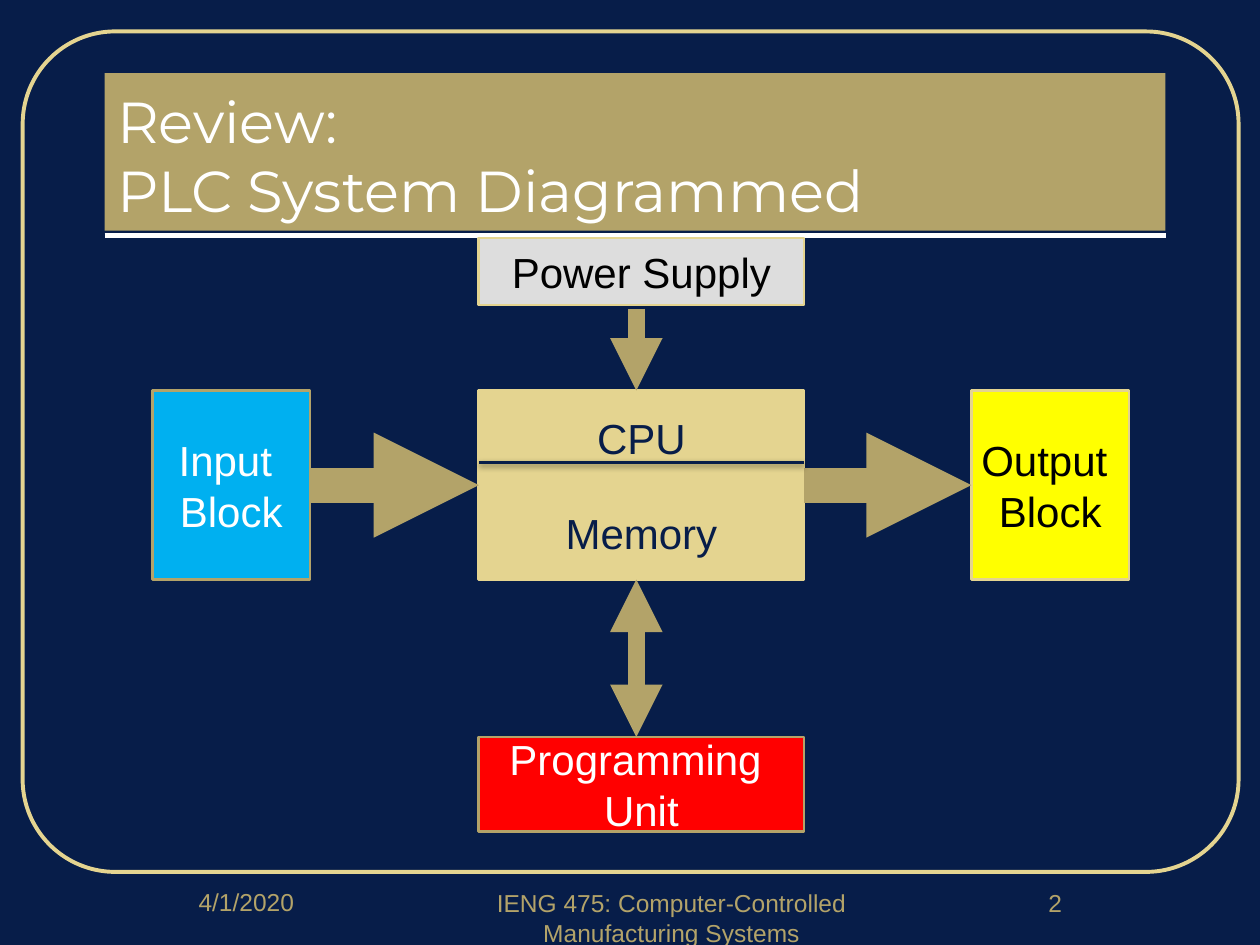
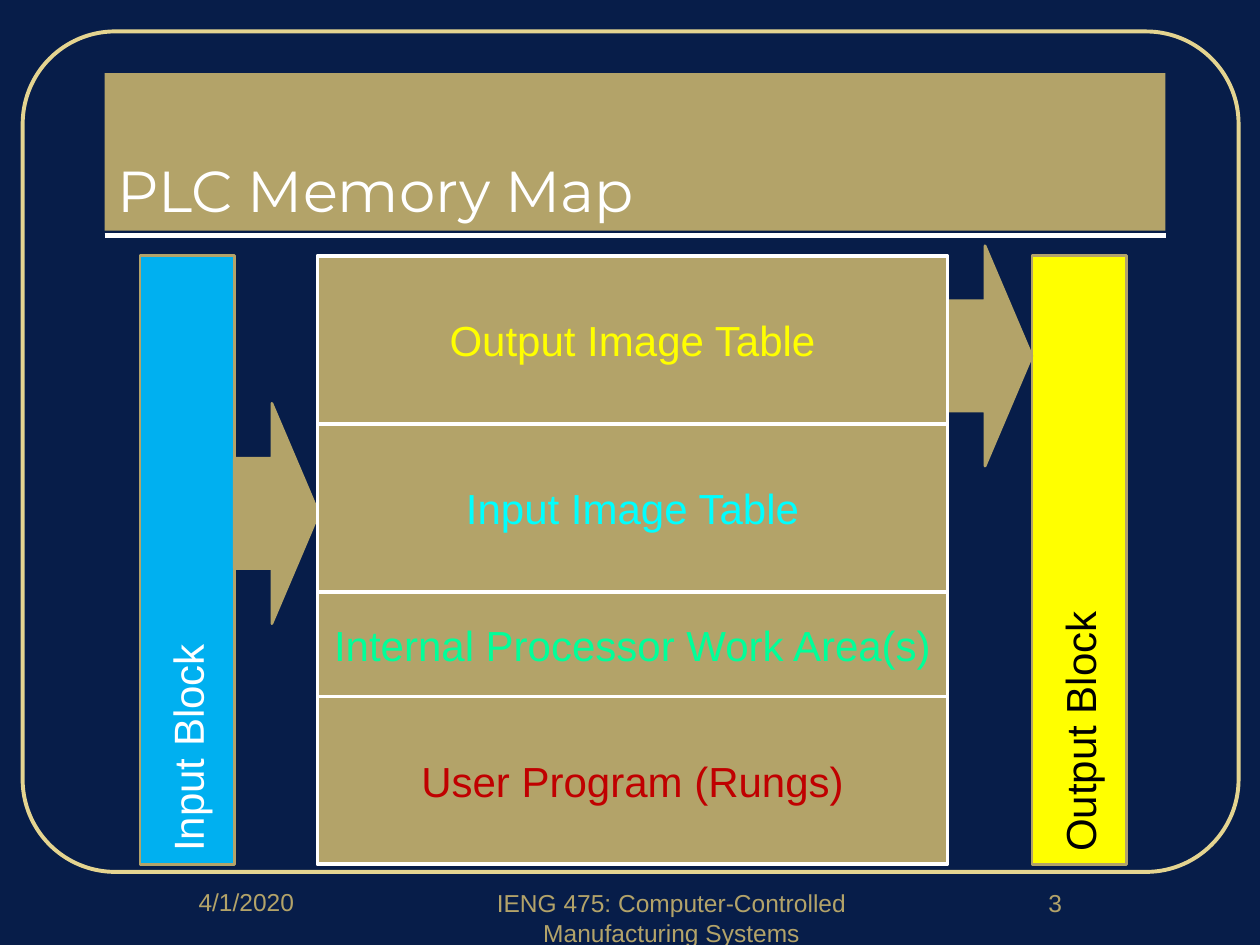
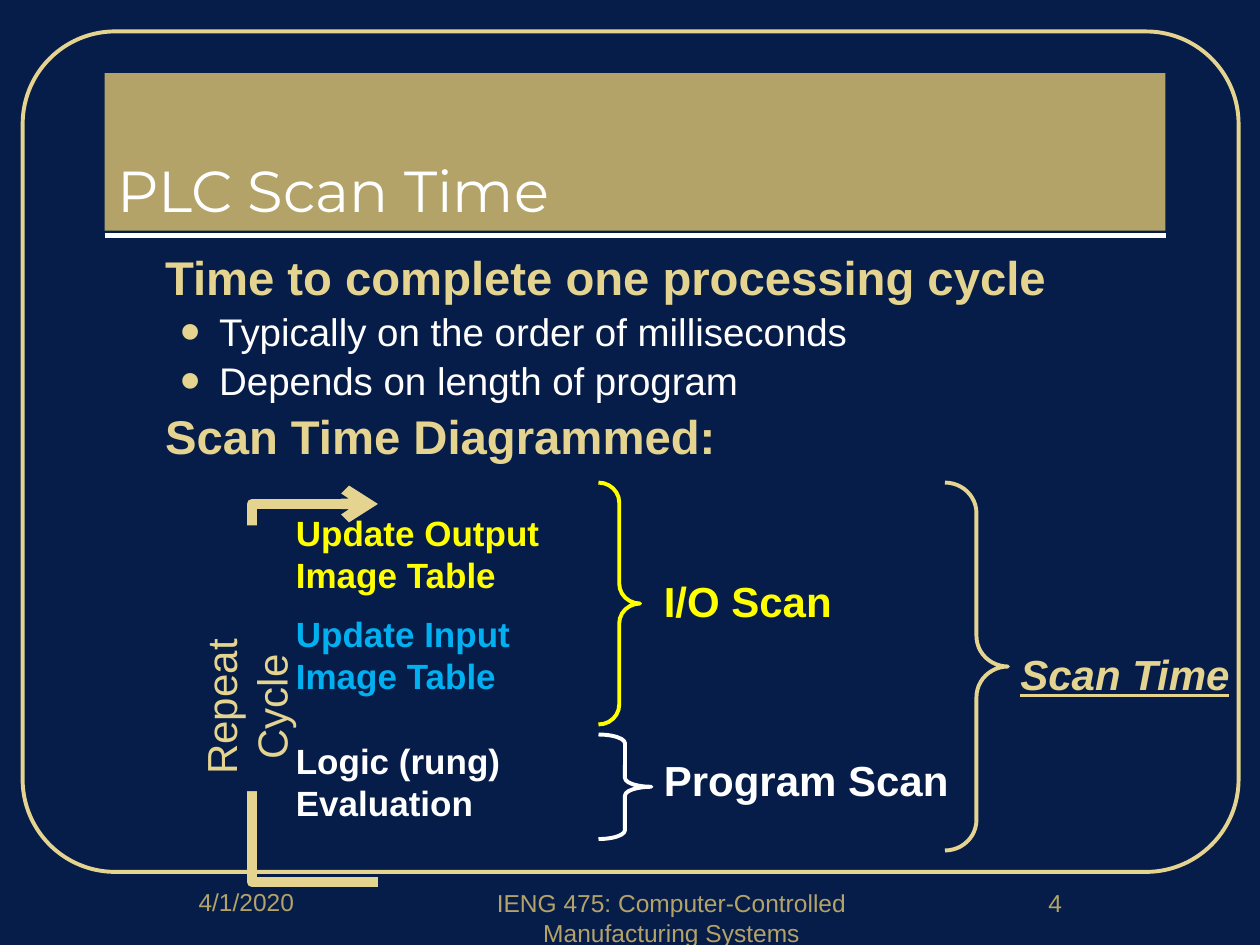
from dataclasses import dataclass

from lxml import etree
from pptx import Presentation
from pptx import util as u
from pptx.dml.color import RGBColor
from pptx.enum import shapes, text
from pptx.oxml import ns

NAVY, GOLD, SAND, WHITE, BLACK = "071D49", "B3A369", "E4D490", "FFFFFF", "000000"
BLUE, YELLOW = "00B0F0", "FFFF00"
BODY_FONT, TITLE_FONT = "Arial", "Montserrat"
COURSE = "IENG 475: Computer-Controlled Manufacturing Systems"
SHAPE = shapes.MSO_SHAPE
LEFT, CENTER = text.PP_ALIGN.LEFT, text.PP_ALIGN.CENTER
MIDDLE = text.MSO_ANCHOR.MIDDLE
CPU_LEFT, CPU_WIDTH, ARROW_X, FLOW_Y = 3.8, 2.58, 5.05, 3.85


@dataclass
class Block:
    left: float
    top: float
    width: float
    height: float
    label: str = ""
    fill: str | None = None
    color: str = WHITE
    line: str | None = None
    weight: float = 1.5
    kind: SHAPE = SHAPE.RECTANGLE
    adjust: tuple[float, ...] = ()
    upward: bool = False

    def box(self) -> list[int]:
        return [u.Inches(v) for v in (self.left, self.top, self.width, self.height)]


@dataclass
class Arrow:
    start: tuple[float, float]
    end: tuple[float, float]
    weight: float = 10
    color: str = GOLD
    heads: tuple[str, ...] = ("tailEnd",)
    shadow: bool = False


def rgb(value: str) -> RGBColor:
    return RGBColor.from_string(value)


def add_xml(parent, tag: str, **attributes: str):
    return etree.SubElement(parent, ns.qn(tag), **attributes)


def write(frame, words: str, *, size: float = 24, color: str = WHITE, font: str = BODY_FONT,
          bold: bool = False, italic: bool = False, underline: bool = False,
          align=LEFT, before: float = 0, spacing: float | None = None):
    """Add one paragraph, using the empty first one if there is one."""
    paragraph = frame.paragraphs[0]
    if paragraph.text:
        paragraph = frame.add_paragraph()
    paragraph.text = words
    paragraph.alignment = align
    paragraph.space_before = u.Pt(before)
    if spacing:
        paragraph.line_spacing = spacing
    for run in paragraph.runs:
        run.font.size, run.font.name = u.Pt(size), font
        run.font.bold, run.font.italic, run.font.underline = bold, italic, underline
        run.font.color.rgb = rgb(color)
    return paragraph


def turn_upward(frame) -> None:
    frame._txBody.bodyPr.set("vert", "vert270")


def add_block(slide, block: Block):
    shape = slide.shapes.add_shape(block.kind, *block.box())
    shape.shadow.inherit = False
    for index, value in enumerate(block.adjust):
        shape.adjustments[index] = value
    if block.fill:
        shape.fill.solid()
        shape.fill.fore_color.rgb = rgb(block.fill)
    else:
        shape.fill.background()
    if block.line:
        shape.line.color.rgb = rgb(block.line)
        shape.line.width = u.Pt(block.weight)
    else:
        shape.line.fill.background()
    if block.label:
        frame = shape.text_frame
        frame.word_wrap = False
        frame.vertical_anchor = MIDDLE
        for words in block.label.split("\n"):
            write(frame, words, color=block.color, align=LEFT if block.upward else CENTER)
        if block.upward:
            turn_upward(frame)
    return shape


def add_arrow(slide, arrow: Arrow):
    ends = [u.Inches(v) for v in (*arrow.start, *arrow.end)]
    line = slide.shapes.add_connector(shapes.MSO_CONNECTOR.STRAIGHT, *ends)
    line.line.color.rgb = rgb(arrow.color)
    line.line.width = u.Pt(arrow.weight)
    for head in arrow.heads:
        add_xml(line.line._get_or_add_ln(), f"a:{head}", type="triangle")
    if not arrow.shadow:
        add_xml(line._element.spPr, "a:effectLst")
    return line


def add_text_box(slide, left: float, top: float, width: float, height: float):
    frame = slide.shapes.add_textbox(*map(u.Inches, (left, top, width, height))).text_frame
    frame.word_wrap = True
    return frame


def add_slide(prs, layout: int, title: str, number: int):
    """Add a slide with the frame, title band, rule and footers that all slides share."""
    slide = prs.slides.add_slide(prs.slide_layouts[layout])
    add_block(slide, Block(0.18, 0.25, 9.65, 6.67, line=SAND, weight=2.25,
                           kind=SHAPE.ROUNDED_RECTANGLE, adjust=(0.11,)))
    add_arrow(slide, Arrow((0.83, 1.87), (9.25, 1.87), 3, WHITE, heads=()))
    for left, top, width, words in ((0.83, 6.99, 2.25, "4/1/2020"), (3.58, 7, 3.5, COURSE),
                                    (7.5, 7, 1.75, str(number))):
        write(add_text_box(slide, left, top, width, 0.5), words, size=14, color=GOLD, align=CENTER)

    band = slide.shapes.title
    band.left, band.top, band.width, band.height = Block(0.83, 0.58, 8.42, 1.25).box()
    band.fill.solid()
    band.fill.fore_color.rgb = rgb(GOLD)
    band.text_frame.auto_size = text.MSO_AUTO_SIZE.NONE
    band.text_frame.vertical_anchor = text.MSO_ANCHOR.BOTTOM
    write(band.text_frame, title, size=33, font=TITLE_FONT)
    return slide


def build_system(prs) -> None:
    slide = add_slide(prs, 5, "Review:\vPLC System Diagrammed", 2)
    input_block = add_block(slide, Block(1.21, 3.1, 1.25, 1.5, "Input \nBlock", BLUE, line=GOLD))
    output_block = add_block(
        slide, Block(7.71, 3.1, 1.25, 1.5, "Output \nBlock", YELLOW, BLACK, SAND))
    for top, height, label, fill, color, line in (
        (1.89, 0.53, "Power Supply", "DDDDDD", BLACK, SAND),
        (3.1, 0.75, "CPU", SAND, NAVY, SAND),
        (3.85, 0.75, "Memory", SAND, NAVY, SAND),
        (5.85, 0.75, "Programming \nUnit", "FF0000", WHITE, GOLD),
    ):
        add_block(slide, Block(CPU_LEFT, top, CPU_WIDTH, height, label, fill, color, line))

    cpu_right = CPU_LEFT + CPU_WIDTH
    inflow = add_arrow(slide, Arrow((2.46, FLOW_Y), (CPU_LEFT, FLOW_Y), 20))
    inflow.begin_connect(input_block, 3)
    outflow = add_arrow(slide, Arrow((cpu_right, FLOW_Y), (7.71, FLOW_Y), 20))
    outflow.end_connect(output_block, 1)
    add_arrow(slide, Arrow((ARROW_X, 2.45), (ARROW_X, 3.1)))
    add_arrow(slide, Arrow((ARROW_X, 4.6), (ARROW_X, 5.85), heads=("headEnd", "tailEnd")))
    add_arrow(slide, Arrow((CPU_LEFT, 3.67), (cpu_right, 3.67), 2, NAVY, heads=(), shadow=True))


def build_memory_map(prs) -> None:
    slide = add_slide(prs, 5, "PLC Memory Map", 3)
    for left, label, fill, color in ((1.11, "Input Block", BLUE, WHITE),
                                     (8.19, "Output Block", YELLOW, BLACK)):
        add_block(slide, Block(left, 2.03, 0.75, 4.83, label, fill, color, GOLD, upward=True))
    for left, top in ((1.86, 3.2), (7.52, 1.95)):
        add_block(slide, Block(left, top, 0.67, 1.75, fill=GOLD, line=GOLD,
                               kind=SHAPE.RIGHT_ARROW, adjust=(0.5, 0.555)))
    top = 2.03
    for label, height, color in (
        ("Output Image Table", 1.335, YELLOW),
        ("Input Image Table", 1.335, "00FFFF"),
        ("Internal Processor Work Area(s)", 0.83, "00FF99"),
        ("User Program (Rungs)", 1.33, "C00000"),
    ):
        add_block(slide, Block(2.52, top, 5, height, label, GOLD, color, WHITE, 2))
        top += height


def set_bullet(paragraph, margin: float, indent: float, bulleted: bool) -> None:
    properties = paragraph._p.get_or_add_pPr()
    properties.set("marL", str(u.Inches(margin)))
    properties.set("indent", str(u.Inches(indent)))
    if bulleted:
        add_xml(add_xml(properties, "a:buClr"), "a:srgbClr", val=SAND)
        add_xml(properties, "a:buSzPct", val="150000")
        add_xml(properties, "a:buFont", typeface=BODY_FONT)
        add_xml(properties, "a:buChar", char="•")
    else:
        add_xml(properties, "a:buNone")


def bezier(points: list[tuple[float, float]], steps: int = 16) -> list[tuple[float, float]]:
    """Sample a chain of cubic curves that share their end points."""
    samples = [points[0]]
    for first in range(0, len(points) - 1, 3):
        corners = points[first:first + 4]
        for step in range(1, steps + 1):
            t = step / steps
            weights = ((1 - t) ** 3, 3 * t * (1 - t) ** 2, 3 * t * t * (1 - t), t ** 3)
            samples.append(tuple(sum(w * corner[axis] for w, corner in zip(weights, corners))
                                 for axis in (0, 1)))
    return samples


def add_repeat_loop(slide) -> None:
    track = bezier([(2.67, 6.62), (2.53, 6.75), (2.39, 6.89), (2.25, 6.85),
                    (2.11, 6.81), (1.9, 6.82), (1.83, 6.39),
                    (1.76, 5.97), (1.76, 4.71), (1.83, 4.28),
                    (1.9, 3.85), (2.11, 3.86), (2.25, 3.83),
                    (2.39, 3.79), (2.53, 3.92), (2.67, 4.05)])
    builder = slide.shapes.build_freeform(*track[0], scale=float(u.Inches(1)))
    builder.add_line_segments(track[1:], close=False)
    loop = builder.convert_to_shape()
    loop.shadow.inherit = False
    loop.fill.background()
    loop.line.color.rgb = rgb(SAND)
    loop.line.width = u.Pt(6)
    outline = loop.line._get_or_add_ln()
    add_xml(outline, "a:round")
    add_xml(outline, "a:tailEnd", type="arrow")

    frame = add_block(slide, Block(1.5, 4.17, 0.6, 2.11, fill=NAVY)).text_frame
    frame.word_wrap = True
    frame.vertical_anchor = text.MSO_ANCHOR.TOP
    frame.margin_top, frame.margin_bottom = u.Inches(0.87), u.Inches(0.05)
    turn_upward(frame)
    write(frame, "Repeat Cycle", color=SAND, align=CENTER)


def build_scan_time(prs) -> None:
    slide = add_slide(prs, 1, "PLC Scan Time", 4)
    body = slide.placeholders[1]
    body.left, body.top, body.width, body.height = Block(0.83, 1.97, 8.42, 1.7).box()
    body.text_frame.auto_size = text.MSO_AUTO_SIZE.NONE
    for words, bulleted in (
        ("Time to complete one processing cycle", False),
        ("Typically on the order of milliseconds", True),
        ("Depends on length of program", True),
        ("Scan Time Diagrammed:", False),
    ):
        if bulleted:
            point = write(body.text_frame, words, size=22, before=4.4, spacing=0.9)
            point.level = 1
            set_bullet(point, 0.81, -0.31, True)
        else:
            heading = write(body.text_frame, words, size=27, color=SAND, bold=True,
                            before=5.4, spacing=0.9)
            set_bullet(heading, 0.38, 0, False)

    steps = add_text_box(slide, 2.25, 4.01, 2.67, 2.64)
    for words, color, before in (("Update Output Image Table", YELLOW, 0),
                                 ("Update Input Image Table", BLUE, 10),
                                 ("Logic (rung) Evaluation", WHITE, 24)):
        write(steps, words, size=20, color=color, bold=True, before=before)

    for left, top, width, words, color in ((5.17, 4.52, 2.58, "I/O Scan", YELLOW),
                                           (5.17, 5.94, 2.58, "Program Scan", WHITE)):
        write(add_text_box(slide, left, top, width, 0.48), words, color=color, bold=True)
    write(add_text_box(slide, 8, 5.1, 2, 0.48), "Scan Time", color=SAND,
          bold=True, italic=True, underline=True)

    for left, top, width, height, color, curl in (
        (4.75, 3.83, 0.33, 1.92, YELLOW, 0.479),
        (4.75, 5.83, 0.42, 0.83, WHITE, 0.167),
        (7.5, 3.83, 0.5, 2.92, SAND, 0.486),
    ):
        add_block(slide, Block(left, top, width, height, line=color, weight=2.25,
                               kind=SHAPE.RIGHT_BRACE, adjust=(curl, 0.5)))
    add_repeat_loop(slide)


def main() -> None:
    prs = Presentation()
    prs.slide_width, prs.slide_height = u.Inches(10), u.Inches(7.5)
    background = prs.slide_master.background.fill
    background.solid()
    background.fore_color.rgb = rgb(NAVY)
    build_system(prs)
    build_memory_map(prs)
    build_scan_time(prs)
    prs.save("out.pptx")


if __name__ == "__main__":
    main()
